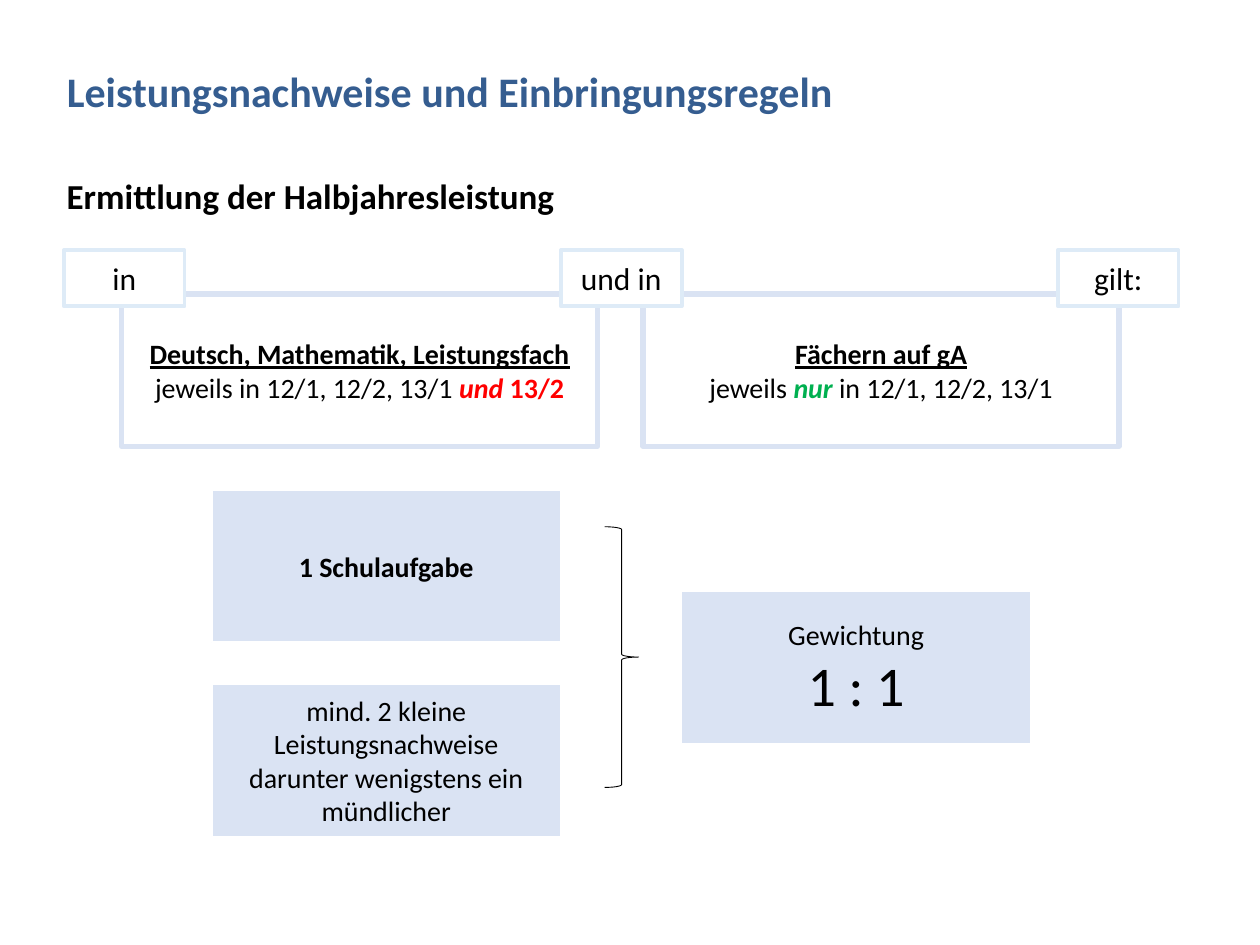
from pptx import Presentation
from pptx.dml.color import RGBColor
from pptx.enum import shapes, text
from pptx.util import Pt

TITLE_BLUE = RGBColor(0x35, 0x5D, 0x90)
PALE_BLUE = RGBColor(0xDA, 0xE3, 0xF3)
TAG_BLUE = RGBColor(0xDE, 0xEB, 0xF7)
BLACK = RGBColor(0, 0, 0)
WHITE = RGBColor(0xFF, 0xFF, 0xFF)
RED = RGBColor(0xFF, 0, 0)
GREEN = RGBColor(0, 0xB0, 0x50)
FONT = "Calibri"


def add_span(para, wording, size, color=BLACK, bold=False, italic=False, underline=False):
    span = para.add_run()
    span.text = wording
    font = span.font
    font.name, font.size, font.color.rgb = FONT, Pt(size), color
    font.bold, font.italic, font.underline = bold, italic, underline


def add_box(left, top, width, height, fill, line, line_width, lines):
    """Add a rectangle; lines holds, per paragraph, a list of (wording, size, format)."""
    box = page.shapes.add_shape(shapes.MSO_SHAPE.RECTANGLE,
                                Pt(left), Pt(top), Pt(width), Pt(height))
    box.shadow.inherit = False
    box.fill.solid()
    box.fill.fore_color.rgb = fill
    box.line.color.rgb = line
    box.line.width = Pt(line_width)
    frame = box.text_frame
    frame.word_wrap = True
    frame.vertical_anchor = text.MSO_ANCHOR.MIDDLE
    for index, spans in enumerate(lines):
        para = frame.add_paragraph() if index else frame.paragraphs[0]
        para.alignment = text.PP_ALIGN.CENTER
        for wording, size, style in spans:
            add_span(para, wording, size, **style)


deck = Presentation()
deck.slide_width, deck.slide_height = Pt(720), Pt(540)
page = deck.slides.add_slide(deck.slide_layouts[5])

# Headings
title = page.shapes.title
title.left, title.top, title.width, title.height = Pt(31), Pt(34), Pt(675), Pt(62.5)
subtitle = page.shapes.add_textbox(Pt(31), Pt(96), Pt(652), Pt(31.5))
for box, wording, size, color in [
    (title, "Leistungsnachweise und Einbringungsregeln", 24, TITLE_BLUE),
    (subtitle, "Ermittlung der Halbjahresleistung", 20, BLACK),
]:
    frame = box.text_frame
    frame.word_wrap = True
    frame.auto_size = text.MSO_AUTO_SIZE.NONE
    frame.vertical_anchor = text.MSO_ANCHOR.TOP
    para = frame.paragraphs[0]
    para.alignment = text.PP_ALIGN.LEFT
    add_span(para, wording, size, color, bold=True)

# Assessments and their weighting
for left, top, lines in [
    (121, 280, [[("1 Schulaufgabe", 16, {"bold": True})]]),
    (121, 391, [[("mind. 2 kleine Leistungsnachweise darunter wenigstens ein mündlicher",
                  16, {})]]),
    (389.5, 338, [[("Gewichtung", 16, {})], [("1 : 1", 32, {})]]),
]:
    add_box(left, top, 199.5, 87, PALE_BLUE, WHITE, 1, lines)

# Subject groups
heading = {"bold": True, "underline": True}
emphasis = {"bold": True, "italic": True}
subject_groups = [
    [[("Deutsch, Mathematik, Leistungsfach", 16, heading)],
     [("jeweils in 12/1, 12/2, 13/1 ", 16, {}),
      ("und ", 16, {"color": RED, **emphasis}),
      ("13/2", 16, {"color": RED, "bold": True})]],
    [[("Fächern auf gA", 16, heading)],
     [("jeweils ", 16, {}),
      ("nur ", 16, {"color": GREEN, **emphasis}),
      ("in 12/1, 12/2, 13/1", 16, {})]],
]
for index, lines in enumerate(subject_groups):
    add_box(69.5 + 298 * index, 168, 272, 87, WHITE, PALE_BLUE, 3, lines)

# Linking words over the group corners
for index, word in enumerate(["in", "und in", "gilt:"]):
    add_box(36.5 + 284 * index, 143, 69, 32, WHITE, TAG_BLUE, 2.25, [[(word, 18, {})]])

brace = page.shapes.add_shape(shapes.MSO_SHAPE.RIGHT_BRACE,
                              Pt(345.5), Pt(301), Pt(19.5), Pt(149))
brace.shadow.inherit = False
brace.fill.background()
brace.line.color.rgb = BLACK
brace.line.width = Pt(0.5)

deck.save("out.pptx")
